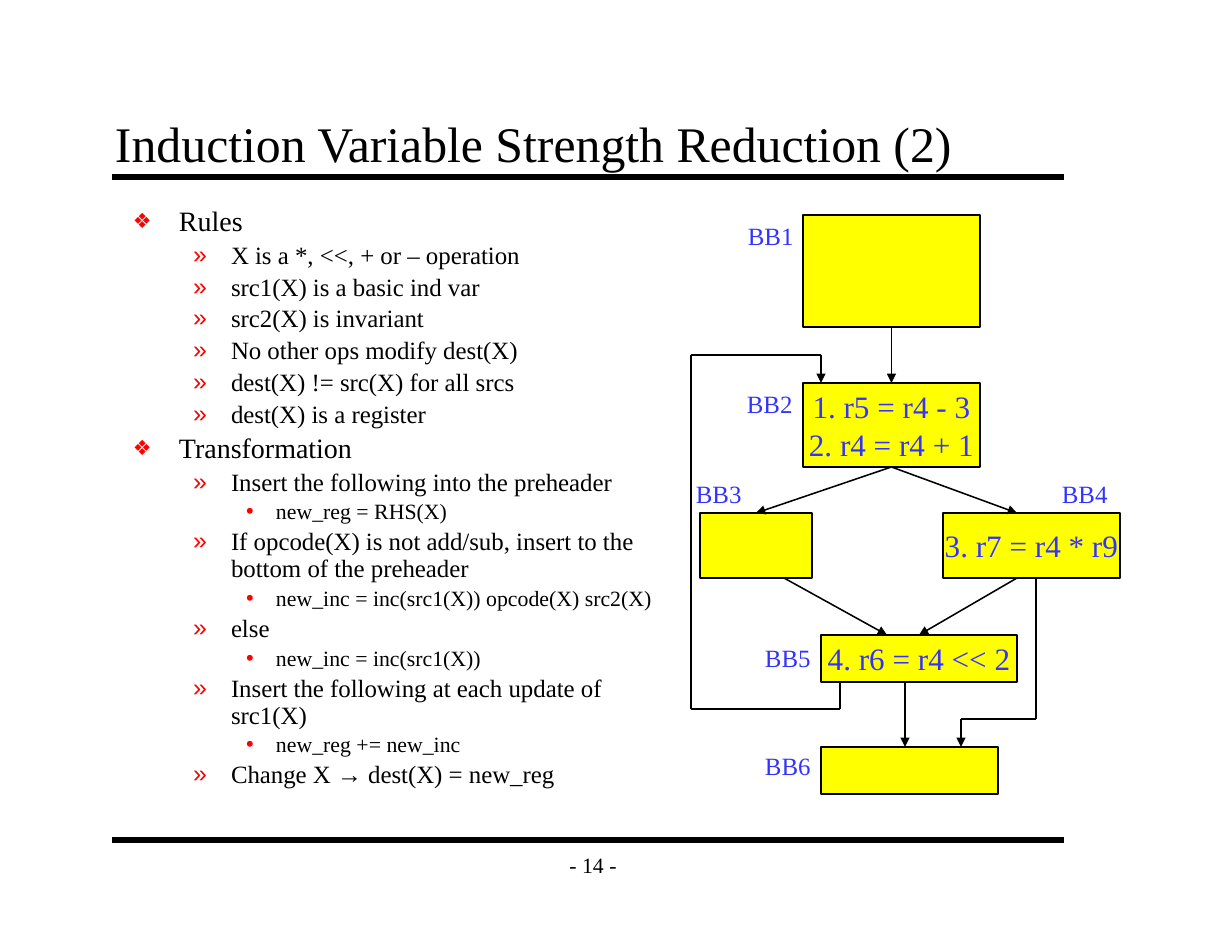
import itertools

import pptx
import pptx.dml.color
import pptx.enum.shapes
import pptx.enum.text
import pptx.oxml.ns
import pptx.util
from lxml import etree

SCALE = 914400 / 112
FONT = "Times New Roman"
COLORS = {"ink": "000000", "block": "FFFF00", "code": "3333FF", "bullet": "FF0000"}
ALIGN = pptx.enum.text.PP_ALIGN
ANCHOR = pptx.enum.text.MSO_ANCHOR
FIT = pptx.enum.text.MSO_AUTO_SIZE
TOP, BOTTOM = 0, 2

# Level: indent, hanging, font size, bullet, bullet percent
LEVELS = [
    (46, 46, 18, "❖", 75),
    (98, 38, 16, "»", 100),
    (143, 30, 14, "•", 100),
]
OUTLINE = [
    (0, "Rules"),
    (1, "X is a *, <<, + or – operation"),
    (1, "src1(X) is a basic ind var"),
    (1, "src2(X) is invariant"),
    (1, "No other ops modify dest(X)"),
    (1, "dest(X) != src(X) for all srcs"),
    (1, "dest(X) is a register"),
    (0, "Transformation"),
    (1, "Insert the following into the preheader"),
    (2, "new_reg = RHS(X)"),
    (1, "If opcode(X) is not add/sub, insert to the bottom of the preheader"),
    (2, "new_inc = inc(src1(X)) opcode(X) src2(X)"),
    (1, "else"),
    (2, "new_inc = inc(src1(X))"),
    (1, "Insert the following at each update of src1(X)"),
    (2, "new_reg += new_inc"),
    (1, "Change X → dest(X) = new_reg"),
]
# Block: box, label position, code lines
BLOCKS = {
    "BB1": ((118, 0, 177, 112), (52, 0), []),
    "BB2": ((118, 168, 177, 84), (51, 168), ["1. r5 = r4 - 3", "2. r4 = r4 + 1"]),
    "BB3": ((15, 298, 112, 65), (0, 258), []),
    "BB4": ((258, 298, 177, 65), (366, 258), ["3. r7 = r4 * r9"]),
    "BB5": ((136, 420, 196, 47), (69, 422), ["4. r6 = r4 << 2"]),
    "BB6": ((136, 532, 177, 47), (69, 530), []),
}
# Edge: block joined at its start, block joined at its end, route
EDGES = [
    ("BB1", "BB2", [(207, 112), (207, 168)]),
    ("BB2", "BB3", [(207, 252), (71, 298)]),
    ("BB2", None, [(207, 252), (332, 298)]),
    (None, None, [(99, 363), (202, 420)]),
    (None, "BB5", [(332, 363), (234, 420)]),
    (None, None, [(220, 467), (220, 532)]),
    (None, None, [(155, 467), (155, 494), (6, 494), (6, 140), (136, 140), (136, 168)]),
    (None, None, [(351, 363), (351, 504), (276, 504), (276, 532)]),
]


def px(length):
    """Turn px into EMU."""
    return pptx.util.Emu(round(length * SCALE))


def rgb(name):
    """Look up a colour."""
    return pptx.dml.color.RGBColor.from_string(COLORS[name])


def add_span(para, text, size, color="ink"):
    """Add one formatted run to a paragraph."""
    span = para.add_run()
    span.text = text
    span.font.name = FONT
    span.font.size = pptx.util.Pt(size)
    span.font.color.rgb = rgb(color)


def add_child(parent, tag, **attributes):
    """Append a DrawingML element."""
    return etree.SubElement(parent, pptx.oxml.ns.qn(tag), **attributes)


def move(shape, box):
    """Place a shape on the given box."""
    shape.left, shape.top, shape.width, shape.height = map(px, box)


def add_line(page, start, end, width, arrow=False):
    """Draw a straight line, with an arrowhead at its end if asked."""
    line = page.shapes.add_connector(
        pptx.enum.shapes.MSO_CONNECTOR.STRAIGHT, *map(px, start + end))
    line.line.color.rgb = rgb("ink")
    line.line.width = pptx.util.Pt(width)
    if arrow:
        add_child(line.line._get_or_add_ln(), "a:tailEnd", type="triangle", w="med", len="med")
    add_child(line._element.spPr, "a:effectLst")
    return line


def add_title(page, box):
    """Fill the title placeholder."""
    title = page.shapes.title
    move(title, box)
    frame = title.text_frame
    frame.auto_size = FIT.NONE
    frame.vertical_anchor = ANCHOR.BOTTOM
    frame.margin_left = frame.margin_right = px(12)
    para = frame.paragraphs[0]
    para.alignment = ALIGN.LEFT
    add_span(para, "Induction Variable Strength Reduction (2)", 32)


def format_level(para, level):
    """Give a paragraph the indent, spacing and bullet of its level."""
    indent, hanging, _, bullet, percent = LEVELS[level]
    para.level = level
    para.line_spacing = 0.9
    props = para._p.get_or_add_pPr()
    props.set("marL", str(px(indent)))
    props.set("indent", str(-px(hanging)))
    add_child(add_child(props, "a:spcBef"), "a:spcPct", val="20000")
    add_child(add_child(props, "a:buClr"), "a:srgbClr", val=COLORS["bullet"])
    add_child(props, "a:buSzPct", val=str(percent * 1000))
    add_child(props, "a:buChar", char=bullet)


def add_outline(page, box):
    """Fill the body placeholder with the bulleted outline."""
    body = page.placeholders[1]
    move(body, box)
    frame = body.text_frame
    frame.auto_size = FIT.NONE
    frame.margin_left = frame.margin_right = px(12)
    for index, (level, text) in enumerate(OUTLINE):
        para = frame.add_paragraph() if index else frame.paragraphs[0]
        format_level(para, level)
        add_span(para, text, LEVELS[level][2])


def add_block(page, box, lines):
    """Draw one basic block with its code."""
    block = page.shapes.add_shape(pptx.enum.shapes.MSO_SHAPE.RECTANGLE, *map(px, box))
    block.shadow.inherit = False
    block.fill.solid()
    block.fill.fore_color.rgb = rgb("block")
    block.line.color.rgb = rgb("ink")
    block.line.width = pptx.util.Pt(1)
    frame = block.text_frame
    frame.word_wrap = False
    frame.vertical_anchor = ANCHOR.MIDDLE
    for index, text in enumerate(lines):
        para = frame.add_paragraph() if index else frame.paragraphs[0]
        para.alignment = ALIGN.CENTER
        add_span(para, text, 20, "code")
    return block


def add_label(page, box, text, size, color="ink", align=ALIGN.LEFT):
    """Write one unwrapped line of text."""
    label = page.shapes.add_textbox(*map(px, box))
    frame = label.text_frame
    frame.word_wrap = False
    frame.auto_size = FIT.SHAPE_TO_FIT_TEXT
    para = frame.paragraphs[0]
    para.alignment = align
    add_span(para, text, size, color)


def add_flow_graph(page, left, top):
    """Draw the control flow graph from its top left corner."""
    blocks = {}
    for name, ((x, y, width, height), _, lines) in BLOCKS.items():
        blocks[name] = add_block(page, (left + x, top + y, width, height), lines)
    for source, target, route in EDGES:
        points = [(left + x, top + y) for x, y in route]
        for start, end in itertools.pairwise(points):
            line = add_line(page, start, end, 1, arrow=end == points[-1])
            if source:
                line.begin_connect(blocks[source], BOTTOM)
            if target:
                line.end_connect(blocks[target], TOP)
    for name, (_, (x, y), _) in BLOCKS.items():
        add_label(page, (left + x, top + y, 68, 41), name, 16, "code")


def main():
    """Build the deck."""
    deck = pptx.Presentation()
    deck.slide_width, deck.slide_height = px(1232), px(952)
    page = deck.slides.add_slide(deck.slide_layouts[1])
    for y in (177, 840):
        add_line(page, (112, y), (1064, y), 4)
    add_label(page, (551, 846, 84, 37), "- 14 -", 14, align=ALIGN.CENTER)
    add_title(page, (103, 103, 952, 75))
    add_outline(page, (121, 202, 569, 638))
    add_flow_graph(page, 685, 215)
    deck.save("out.pptx")


if __name__ == "__main__":
    main()
